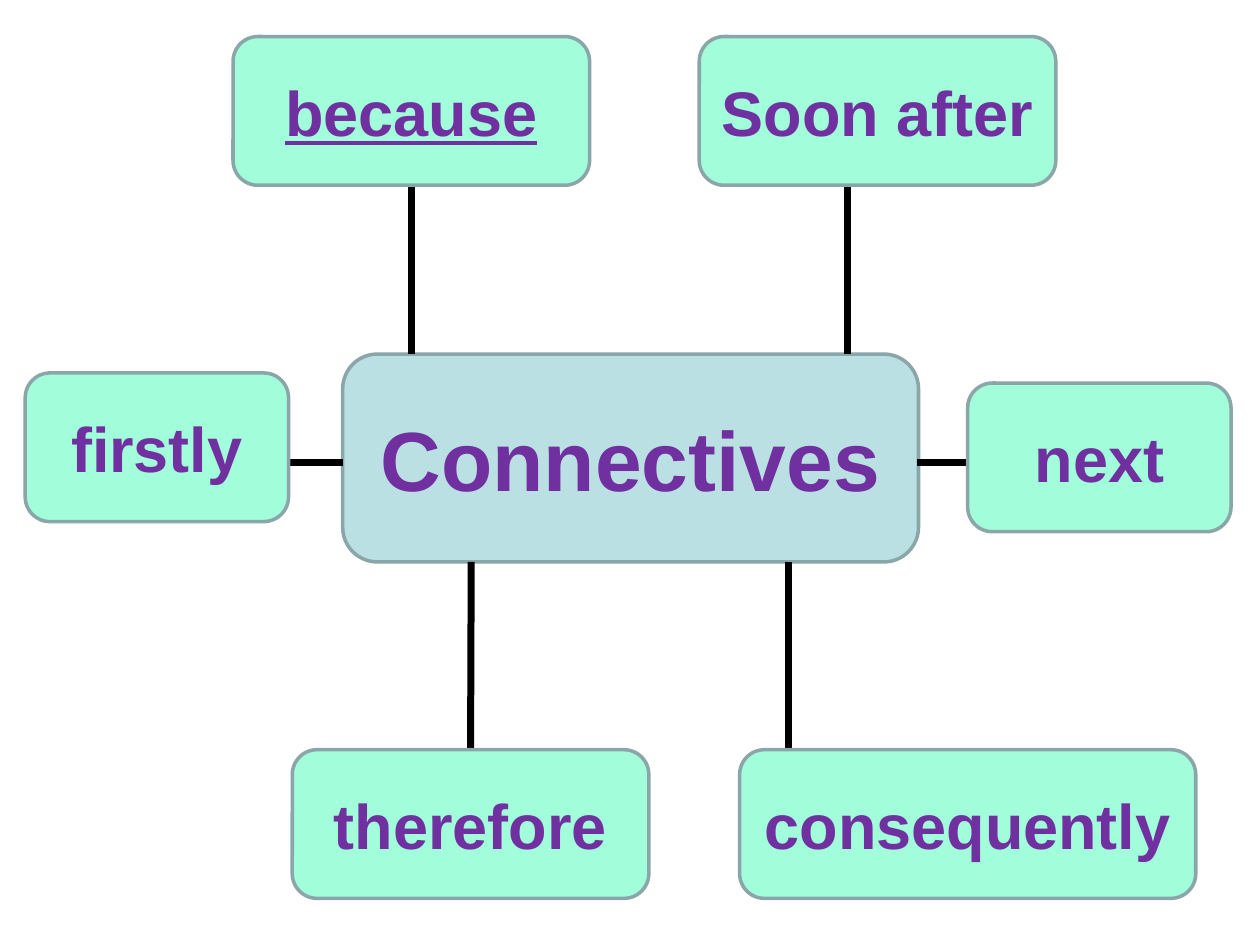
"""Build a mind map of connectives around a central box."""
from lxml import etree
from pptx import Presentation
from pptx.dml.color import RGBColor
from pptx.enum.shapes import MSO_CONNECTOR as CONN, MSO_SHAPE as SHAPE
from pptx.enum.text import MSO_ANCHOR, PP_ALIGN
from pptx.oxml.ns import qn
from pptx.util import Inches, Pt

HUB = ("Connectives", 2.72, 2.81, 4.57, 1.65)
WORD_H = 1.18
TOP, BOTTOM = 0.29, 5.95
LINE_Y = 3.67
# word: left, top, width, line start, line end, joined side
WORDS = {
    "because": (1.85, TOP, 2.83, (3.27, 1.31), (3.27, 2.81), None),
    "consequently": (5.87, BOTTOM, 3.62, (6.26, BOTTOM), (6.26, 4.46), None),
    "therefore": (2.32, BOTTOM, 2.83, (3.74, BOTTOM), (3.74, 4.46), 0),
    "Soon after": (5.55, TOP, 2.83, (6.73, 1.31), (6.73, 2.81), None),
    "firstly": (0.2, 2.96, 2.09, (1.69, LINE_Y), (2.72, LINE_Y), None),
    "next": (7.68, 3.04, 2.09, (8.31, LINE_Y), (7.28, LINE_Y), None),
}
UNDERLINED = {"because"}


def rgb(value):
    return RGBColor.from_string(value)


def add_box(s, kind, text, x, y, w, h, fill, size):
    sp = s.shapes.add_shape(kind, *map(Inches, (x, y, w, h)))
    sp.shadow.inherit = False
    sp.fill.solid()
    sp.fill.fore_color.rgb = rgb(fill)
    sp.line.color.rgb = rgb("8AA6A8")
    sp.line.width = Pt(2)
    tf = sp.text_frame
    tf.vertical_anchor = MSO_ANCHOR.MIDDLE
    p = tf.paragraphs[0]
    p.text = text
    p.alignment = PP_ALIGN.CENTER
    p.font.name = "Arial"
    p.font.size = Pt(size)
    p.font.bold = True
    p.font.color.rgb = rgb("7030A0")
    if text in UNDERLINED:
        p.font.underline = True
    return sp


def add_line(s, start, end):
    line = s.shapes.add_connector(CONN.STRAIGHT, *map(Inches, start + end))
    line.line.color.rgb = rgb("000000")
    line.line.width = Pt(4)
    etree.SubElement(line._element.spPr, qn("a:effectLst"))
    return line


def main():
    prs = Presentation()
    prs.slide_width, prs.slide_height = Inches(10), Inches(7.5)
    s = prs.slides.add_slide(prs.slide_layouts[6])
    add_box(s, SHAPE.FLOWCHART_ALTERNATE_PROCESS, *HUB, "BBE0E3", 48)
    lines = {word: add_line(s, *spec[3:5]) for word, spec in WORDS.items()}
    for word, (x, y, w, _, _, side) in WORDS.items():
        sp = add_box(s, SHAPE.ROUNDED_RECTANGLE, word, x, y, w, WORD_H, "A1FDDA", 36)
        if side is not None:
            lines[word].begin_connect(sp, side)
    prs.save("out.pptx")


if __name__ == "__main__":
    main()
